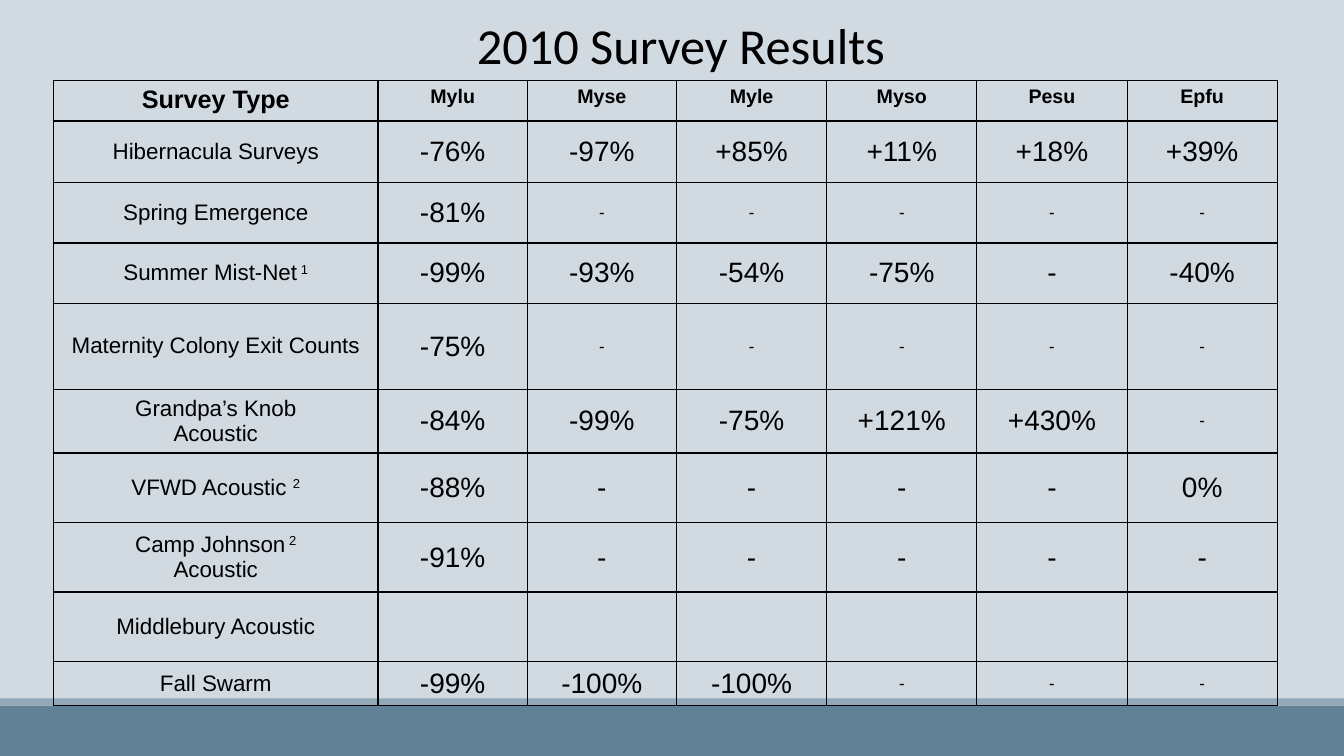
from lxml import etree
from pptx import Presentation
from pptx.dml.color import RGBColor
from pptx.enum.shapes import MSO_SHAPE
from pptx.enum.text import MSO_ANCHOR, MSO_AUTO_SIZE, PP_ALIGN
from pptx.oxml.ns import qn
from pptx.util import Inches, Pt

RECT = MSO_SHAPE.RECTANGLE
TOP, MIDDLE = MSO_ANCHOR.TOP, MSO_ANCHOR.MIDDLE
CENTER = PP_ALIGN.CENTER
GROW = MSO_AUTO_SIZE.SHAPE_TO_FIT_TEXT

HEAD = ["Survey Type", "Mylu", "Myse", "Myle", "Myso", "Pesu", "Epfu"]
COLS = [3.22] + [1.48] * 2 + [1.49] * 4
# Each survey: label, row height, dash size, values; "^" starts a superscript.
SURVEYS = [
    ("Hibernacula Surveys", 0.61, 20, "-76% -97% +85% +11% +18% +39%"),
    ("Spring Emergence", 0.6, 12, "-81% - - - - -"),
    ("Summer Mist-Net^ 1", 0.6, 20, "-99% -93% -54% -75% - -40%"),
    ("Maternity Colony Exit Counts", 0.85, 12, "-75% - - - - -"),
    ("Grandpa’s Knob\nAcoustic", 0.6, 12, "-84% -99% -75% +121% +430% -"),
    ("VFWD Acoustic ^2", 0.69, 20, "-88% - - - - 0%"),
    ("Camp Johnson^ 2\nAcoustic", 0.69, 20, "-91% - - - - -"),
    ("Middlebury Acoustic", 0.69, 20, ""),
    ("Fall Swarm", 0.42, 12, "-99% -100% -100% - - -"),
]


def color(code):
    """Turn a hex string into a colour."""
    return RGBColor.from_string(code)


def assign(item, values):
    """Set each attribute named in a dict."""
    for name, value in values.items():
        setattr(item, name, value)


class Deck:
    """Hold the style and the current slide."""

    ink, sans, title_font = "000000", "Arial", "Calibri"

    def __init__(self, back):
        """Start a wide slide with a plain background."""
        self.prs = Presentation()
        assign(self.prs, {"slide_width": Inches(13.33), "slide_height": Inches(7.5)})
        self.slide = self.prs.slides.add_slide(self.prs.slide_layouts[5])
        fill = self.slide.background.fill
        fill.solid()
        fill.fore_color.rgb = color(back)

    def letter(self, frame, text, size, font, bold=False):
        """Add centred lines, raising what follows a caret."""
        for num, line in enumerate(text.split("\n")):
            para = frame.add_paragraph() if num else frame.paragraphs[0]
            para.alignment = CENTER
            for order, part in enumerate(line.split("^")):
                run = para.add_run()
                run.text = part
                assign(run.font, {"name": font, "size": Pt(size), "bold": bold})
                run.font.color.rgb = color(self.ink)
                if order:
                    run.font._element.set("baseline", "30000")

    def title(self, text, box):
        """Place and fill the title."""
        shape = self.slide.shapes.title
        sides = ("left", "top", "width", "height")
        assign(shape, dict(zip(sides, map(Inches, box))))
        assign(shape.text_frame, {
            "word_wrap": True, "auto_size": GROW,
            "vertical_anchor": TOP, "margin_top": Inches(0.08)})
        self.letter(shape.text_frame, text, 36, self.title_font)

    def bar(self, top, height, tint):
        """Draw a band across the slide."""
        shape = self.slide.shapes.add_shape(
            RECT, 0, Inches(top), self.prs.slide_width, Inches(height))
        shape.shadow.inherit = False
        shape.fill.solid()
        shape.fill.fore_color.rgb = color(tint)
        shape.line.fill.background()

    def border(self, cell):
        """Rule all four sides of a cell."""
        props = cell._tc.get_or_add_tcPr()
        for side in ("a:lnL", "a:lnR", "a:lnT", "a:lnB"):
            line = etree.SubElement(props, qn(side), w=str(Pt(1)))
            fill = etree.SubElement(line, qn("a:solidFill"))
            etree.SubElement(fill, qn("a:srgbClr"), val=self.ink)

    def cell(self, cell, text, size, anchor=MIDDLE, bold=False):
        """Format and fill one cell."""
        self.border(cell)
        cell.fill.background()
        cell.vertical_anchor = anchor
        if text:
            self.letter(cell.text_frame, text, size, self.sans, bold)

    def table(self, left, top):
        """Build the survey table."""
        rows = [0.39] + [high for _, high, _, _ in SURVEYS]
        table = self.slide.shapes.add_table(
            len(rows), len(COLS), Inches(left), Inches(top),
            Inches(sum(COLS)), Inches(sum(rows))).table
        assign(table, {"first_row": False, "horz_banding": False})
        for col, wide in zip(table.columns, COLS):
            col.width = Inches(wide)
        for row, high in zip(table.rows, rows):
            row.height = Inches(high)
        for col, text in enumerate(HEAD):
            self.cell(table.cell(0, col), text, 14 if col else 18, TOP, True)
        for row, (label, _, dash, values) in enumerate(SURVEYS, 1):
            self.cell(table.cell(row, 0), label, 16)
            texts = values.split() or [""] * (len(COLS) - 1)
            for col, text in enumerate(texts, 1):
                self.cell(table.cell(row, col), text, dash if text == "-" else 20)


def main():
    """Build and save the slide."""
    deck = Deck("D1D9E1")
    deck.bar(7, 0.5, "618197")
    deck.bar(6.93, 0.07, "92A9B9")
    deck.table(0.53, 0.8)
    deck.title("2010 Survey Results", (2.42, 0.06, 8.67, 0.71))
    deck.prs.save("out.pptx")


if __name__ == "__main__":
    main()
